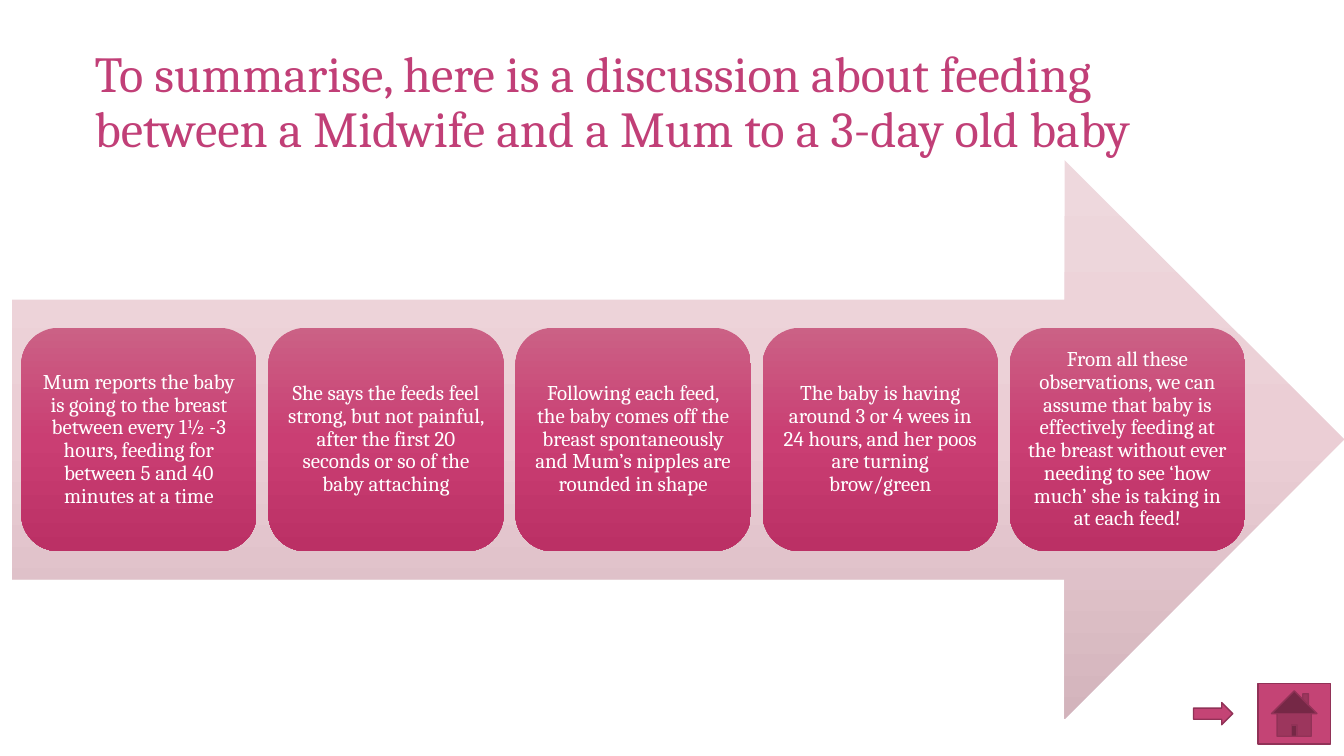
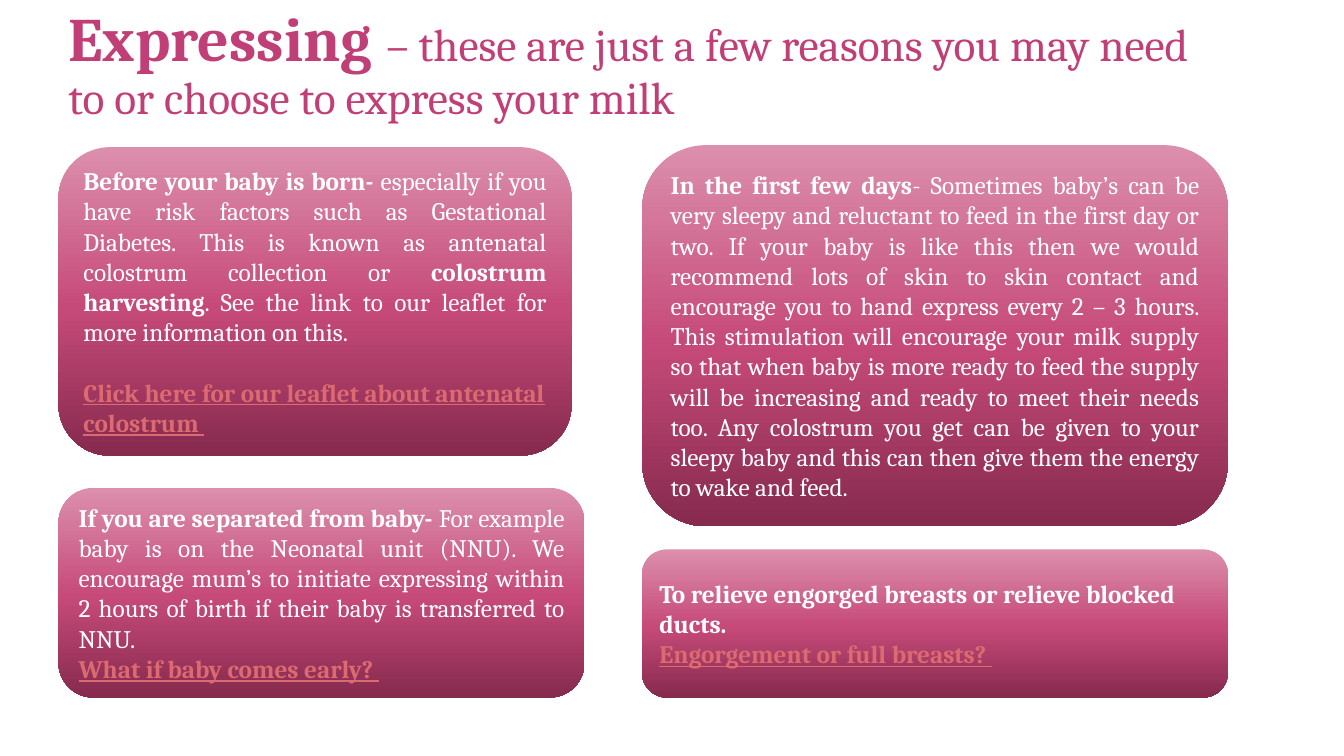
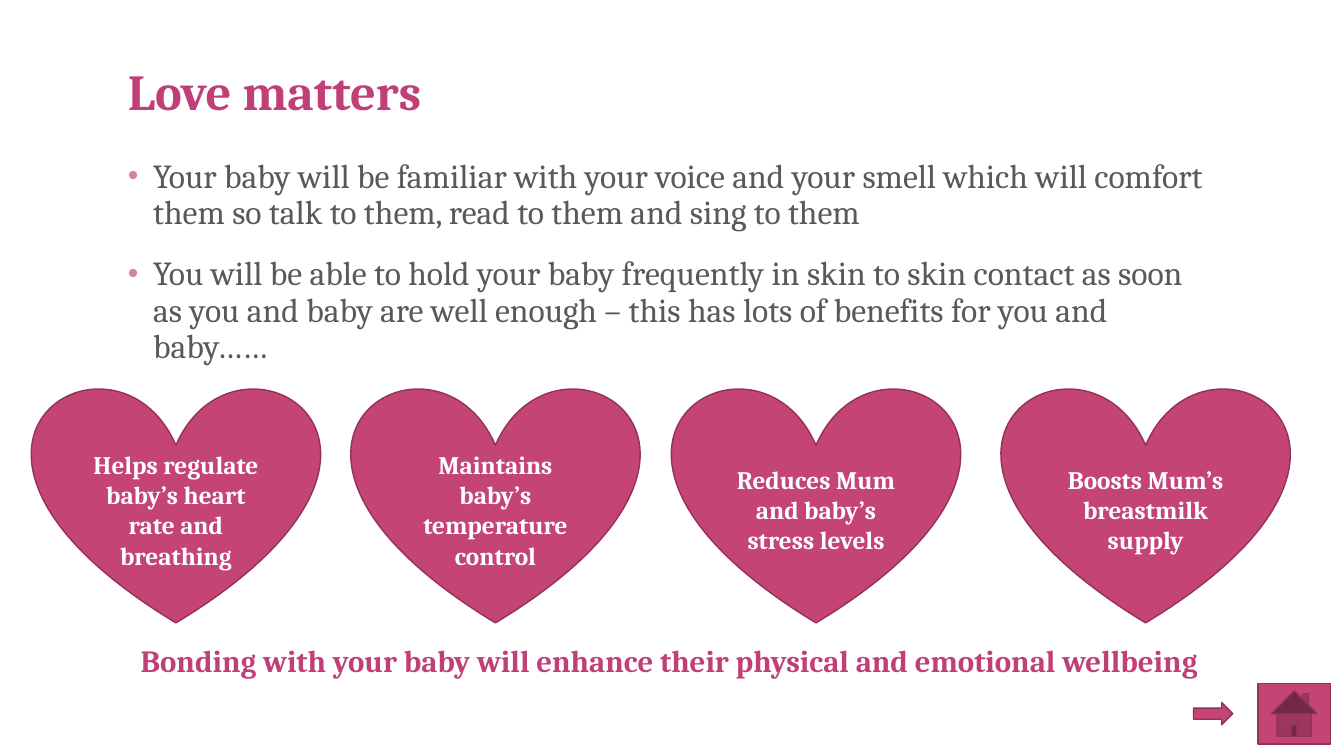
from typing import NamedTuple

from lxml import etree
from pptx import Presentation
from pptx.dml.color import RGBColor
from pptx.enum.shapes import MSO_SHAPE as Preset
from pptx.enum.text import MSO_ANCHOR as Anchor, PP_ALIGN as Align
from pptx.oxml import parse_xml
from pptx.oxml.ns import nsdecls, qn
from pptx.util import Inches, Pt

TITLE, PINK, EDGE = "C13F77", "C44475", "913257"
WHITE, GREY, BULLET, LINK = "FFFFFF", "595959", "D680A5", "DB6B70"
ARROW_FADE = ((0, "EED8DD"), (50, "EBCED5"), (100, "D3B4BC"))
STEP_FADE = ((0, "CB6185"), (50, "CA3E73"), (100, "BB3065"))
CARD_FADE = ((0, "DC8FAC"), (52, "C64A79"), (100, "862A4E"))
FONT = "Cambria"
BOLD = {"bold": True}
LINKED = {"bold": True, "underline": True, "color": LINK}
JUSTIFIED = {"alignment": Align.JUSTIFY}
LEFT = {"alignment": Align.LEFT}
CENTRED = {"alignment": Align.CENTER}
TIGHT = {"line_spacing": 0.9}

STEPS = (
    "Mum reports the baby is going to the breast between every 1½ -3 hours, feeding for between 5 and 40 minutes at a time",
    "She says the feeds feel strong, but not painful, after the first 20 seconds or so of the baby attaching",
    "Following each feed, the baby comes off the breast spontaneously and Mum’s nipples are rounded in shape",
    "The baby is having around 3 or 4 wees in 24 hours, and her poos are turning brow/green",
    "From all these observations, we can assume that baby is effectively feeding at the breast without ever needing to see ‘how much’ she is taking in at each feed!",
)
CARDS = (
    ((4.35, 19.47, 38.18, 40.8), [
        (JUSTIFIED, [
            ("Before your baby is born- ", BOLD),
            ("especially if you have risk factors such as Gestational Diabetes. This is known as antenatal colostrum collection or ", {}),
            ("colostrum harvesting", BOLD),
            (". See the link to our leaflet for more information on this.", {}),
        ]),
        (LEFT | {"space_before": Pt(21.5)},
         [("Click here for our leaflet about antenatal colostrum ", LINKED)]),
    ]),
    ((47.78, 19.2, 43.58, 50.4), [
        (JUSTIFIED, [
            ("In the first few days", BOLD),
            ("- Sometimes baby’s can be very sleepy and reluctant to feed in the first day or two. If your baby is like this then we would recommend lots of skin to skin contact and encourage you to hand express every 2 – 3 hours. This stimulation will encourage your milk supply so that when baby is more ready to feed the supply will be increasing and ready to meet their needs too. Any colostrum you get can be given to your sleepy baby and this can then give them the energy to wake and feed.", {}),
        ]),
    ]),
    ((4.35, 64.53, 39.15, 27.73), [
        (JUSTIFIED, [
            ("If you are separated from baby- ", BOLD),
            ("For example baby is on the Neonatal unit (NNU). We encourage mum’s to initiate expressing within 2 hours of birth if their baby is transferred to NNU.", {}),
        ]),
        (JUSTIFIED, [("What if baby comes early? ", LINKED)]),
    ]),
    ((47.78, 72.67, 43.58, 19.6), [
        (LEFT, [("To relieve engorged breasts or relieve blocked ducts.", BOLD)]),
        (LEFT, [("Engorgement or full breasts? ", LINKED)]),
    ]),
)
ADVICE = (
    "Your baby will be familiar with your voice and your smell which will comfort them so talk to them, read to them and sing to them",
    "You will be able to hold your baby frequently in skin to skin contact as soon as you and baby are well enough – this has lots of benefits for you and baby……",
)
BENEFITS = (
    (0, "Helps regulate baby’s heart rate and breathing"),
    (25.42, "Maintains baby’s temperature control"),
    (50.92, "Reduces Mum and baby’s stress levels"),
    (77.14, "Boosts Mum’s breastmilk supply"),
)


class Box(NamedTuple):
    """A rectangle on the slide that hands out areas of itself."""
    left: int
    top: int
    width: int
    height: int

    def area(self, left, top, width, height):
        """Return the box at these percentages of this one."""
        return Box(round(self.left + self.width * left / 100),
                   round(self.top + self.height * top / 100),
                   round(self.width * width / 100),
                   round(self.height * height / 100))

    def columns(self, number, gap):
        """Return equal columns with a percentage gap between them."""
        width = (100 - gap * (number - 1)) / number
        return [self.area(i * (width + gap), 0, width, 100) for i in range(number)]


PAGE = Box(0, 0, Inches(13.33), Inches(7.5))


def colour(code):
    """Turn a hex string into a colour."""
    return RGBColor.from_string(code)


def assign(target, values):
    """Set each attribute named in a dict."""
    for name, value in values.items():
        setattr(target, name, value)


def write(shape, paras, base, frame=None):
    """Fill a shape with paragraphs of formatted spans."""
    text = shape.text_frame
    assign(text, {"word_wrap": True, "vertical_anchor": Anchor.MIDDLE} | (frame or {}))
    for index, (layout, spans) in enumerate(paras):
        para = text.add_paragraph() if index else text.paragraphs[0]
        assign(para, layout)
        for words, style in spans:
            span = para.add_run()
            span.text = words
            values = {"name": FONT, "bold": False} | base | style
            span.font.color.rgb = colour(values.pop("color"))
            assign(span.font, values)


def add_text(page, box, paras, base, anchor):
    """Add a text box and return it."""
    shape = page.shapes.add_textbox(*box)
    write(shape, paras, base, {"vertical_anchor": anchor})
    return shape


def add_title(page, box, spans):
    """Add the slide title, resting on the foot of its box."""
    add_text(page, box, [(TIGHT, spans)], {"size": Pt(36), "color": TITLE}, Anchor.BOTTOM)


def add_solid(page, preset, box):
    """Add a pink shape with a dark edge."""
    shape = page.shapes.add_shape(preset, *box)
    shape.shadow.inherit = False
    shape.fill.solid()
    shape.fill.fore_color.rgb = colour(PINK)
    shape.line.color.rgb = colour(EDGE)
    shape.line.width = Pt(1)
    return shape


def add_faded(page, preset, box, stops):
    """Add a borderless shape shaded from top to bottom."""
    shape = page.shapes.add_shape(preset, *box)
    shape.shadow.inherit = False
    shape.line.fill.background()
    marks = "".join(f'<a:gs pos="{at * 1000}"><a:srgbClr val="{code}"/></a:gs>'
                    for at, code in stops)
    fade = parse_xml(f'<a:gradFill {nsdecls("a")} rotWithShape="1"><a:gsLst>{marks}</a:gsLst>'
                     '<a:lin ang="5400000" scaled="0"/></a:gradFill>')
    shape._element.spPr.find(qn("a:prstGeom")).addnext(fade)
    return shape


def add_bullet(para):
    """Give a paragraph a hanging round bullet."""
    props = para._p.get_or_add_pPr()
    for name, value in {"marL": Inches(0.25), "indent": -Inches(0.25)}.items():
        props.set(name, str(value))
    tint = etree.SubElement(props, qn("a:buClr"))
    etree.SubElement(tint, qn("a:srgbClr"), val=BULLET)
    etree.SubElement(props, qn("a:buSzPct"), val="90000")
    etree.SubElement(props, qn("a:buFont"), typeface="Arial")
    etree.SubElement(props, qn("a:buChar"), char="•")


def add_navigation(page, box):
    """Add the home button and the next arrow."""
    add_solid(page, Preset.ACTION_BUTTON_HOME, box.area(47.06, 0, 52.94, 100))
    add_solid(page, Preset.RIGHT_ARROW, box.area(0, 31.7, 28.7, 36.7))


def add_process(page, box):
    """Add the wide arrow with its row of steps."""
    add_faded(page, Preset.RIGHT_ARROW, box, ARROW_FADE)
    inset = {f"margin_{side}": Pt(4.5) for side in ("left", "top", "right", "bottom")}
    row = box.area(0.68, 30, 91.9, 40)
    for cell, words in zip(row.columns(len(STEPS), 0.95), STEPS):
        step = add_faded(page, Preset.ROUNDED_RECTANGLE, cell, STEP_FADE)
        write(step, [(CENTRED | TIGHT, [(words, {})])],
              {"size": Pt(15), "color": WHITE}, inset)


def add_cards(page, box):
    """Add the rounded cards of reasons."""
    for place, paras in CARDS:
        card = add_faded(page, Preset.ROUNDED_RECTANGLE, box.area(*place), CARD_FADE)
        write(card, paras, {"size": Pt(18), "color": WHITE})


def add_advice(page, box):
    """Add the bulleted advice."""
    paras = [(TIGHT | ({"space_before": Pt(18)} if index else {}), [(words, {})])
             for index, words in enumerate(ADVICE)]
    shape = add_text(page, box, paras, {"size": Pt(24), "color": GREY}, Anchor.TOP)
    for para in shape.text_frame.paragraphs:
        add_bullet(para)


def add_hearts(page, box):
    """Add the row of hearts, their text set low."""
    for left, words in BENEFITS:
        heart = add_solid(page, Preset.HEART, box.area(left, 0, 22.86, 100))
        write(heart, [(CENTRED, [(words, BOLD)])],
              {"size": Pt(18), "color": WHITE}, {"margin_top": Pt(25)})


def build_summary(page, box):
    """Build the slide of the feeding discussion."""
    add_title(page, box.area(6.3, 4.27, 82.5, 17.33), [
        ("To summarise, here is a discussion about feeding between a Midwife and a Mum to a 3-day old baby", {})])
    add_process(page, box.area(0.9, 21.2, 99.1, 73.87))
    add_navigation(page, box.area(88.8, 90.4, 10.2, 8))


def build_expressing(page, box):
    """Build the slide of reasons to express milk."""
    add_title(page, box.area(4.35, 2.67, 88.05, 14.4), [
        ("Expressing ", BOLD | {"size": Pt(44.1)}),
        ("– these are just a few reasons you may need to or choose to express your milk",
         {"size": Pt(32.4)})])
    add_cards(page, box)


def build_love(page, box):
    """Build the slide on bonding."""
    add_title(page, box.area(8.78, -0.67, 82.5, 17.33), [("Love matters", BOLD)])
    add_advice(page, box.area(8.78, 20.4, 82.5, 52.13))
    add_text(page, box.area(8.78, 84.27, 82.5, 6.27),
             [(CENTRED, [("Bonding with your baby will enhance their physical and emotional wellbeing ", BOLD)])],
             {"size": Pt(22), "color": TITLE}, Anchor.TOP)
    add_hearts(page, box.area(2.4, 51.07, 93.53, 31.33))
    add_navigation(page, box.area(88.8, 90.4, 10.2, 8))


def main():
    """Build and save the deck."""
    deck = Presentation()
    assign(deck, {"slide_width": PAGE.width, "slide_height": PAGE.height})
    for build in (build_summary, build_expressing, build_love):
        build(deck.slides.add_slide(deck.slide_layouts[6]), PAGE)
    deck.save("out.pptx")


if __name__ == "__main__":
    main()
